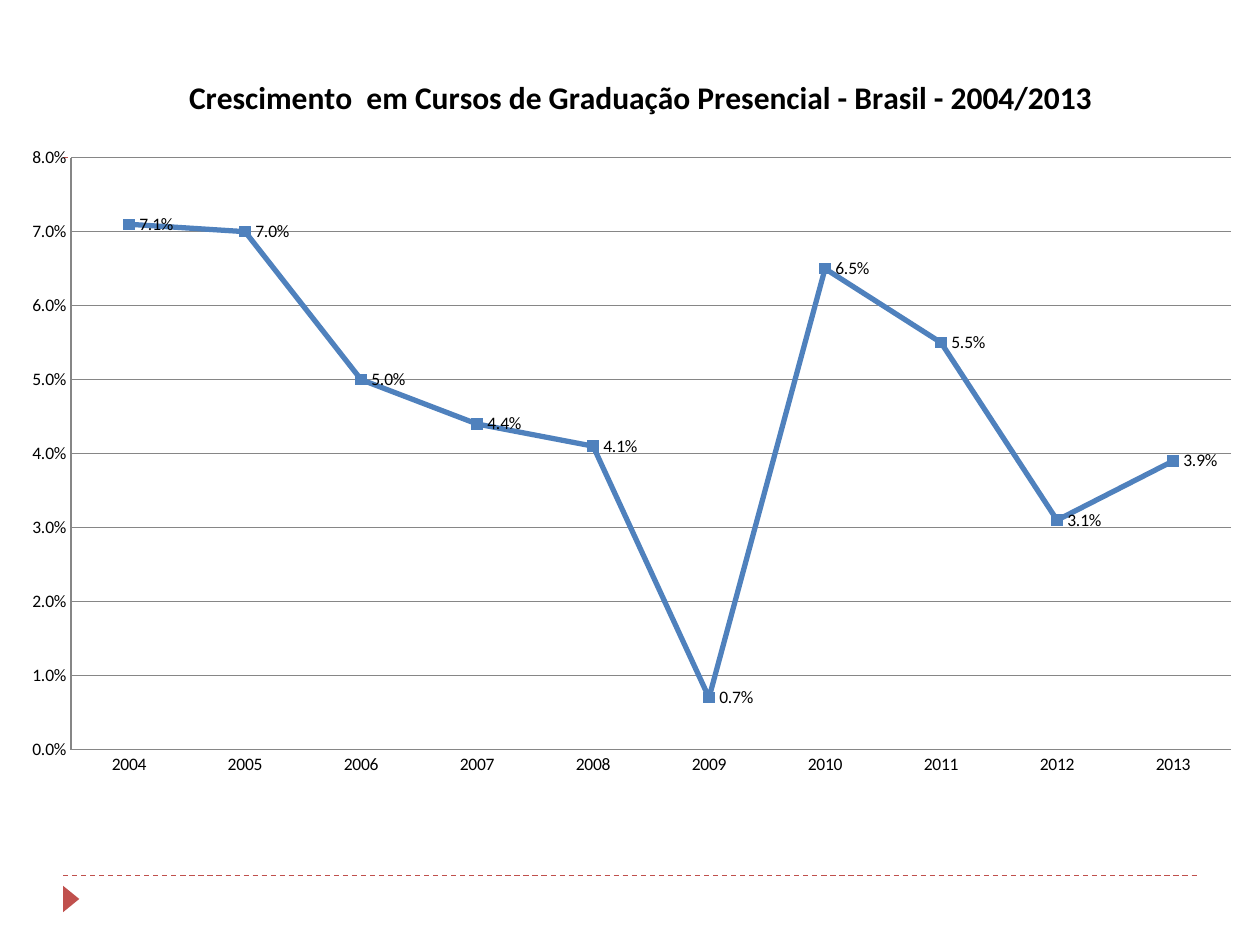
from lxml import etree
from pptx import Presentation
from pptx.chart import data as chart_data
from pptx.dml.color import RGBColor
from pptx.enum import chart as charts, dml, shapes
from pptx.oxml import ns
from pptx.util import Pt

COLORS = {"accent": "C0504D", "series": "4F81BD", "axis": "868686", "text": "000000"}
FONT = "Calibri"
GROWTH = {
    "2004": 0.071, "2005": 0.07, "2006": 0.05, "2007": 0.044, "2008": 0.041,
    "2009": 0.007, "2010": 0.065, "2011": 0.055, "2012": 0.031, "2013": 0.039,
}


def rgb(name):
    """Return the named palette colour."""
    return RGBColor.from_string(COLORS[name])


def style_font(font, size, bold=False, color="text"):
    """Set the face, size, weight and colour of a font."""
    font.name, font.size, font.bold = FONT, Pt(size), bold
    font.color.rgb = rgb(color)


def write(frame, content, **font_format):
    """Put one formatted run of text in a text frame."""
    run = frame.paragraphs[0].add_run()
    run.text = content
    style_font(run.font, **font_format)


def style_line(line, color, width):
    """Set the colour and width of a line."""
    line.color.rgb = rgb(color)
    line.width = Pt(width)


def set_layout(parent, index, **fractions):
    """Place a chart part by fractions of the chart area."""
    for former in parent.findall(ns.qn("c:layout")):
        parent.remove(former)
    layout = etree.Element(ns.qn("c:layout"))
    manual = etree.SubElement(layout, ns.qn("c:manualLayout"))
    modes = {"xMode": "edge", "yMode": "edge"}
    if "w" in fractions:
        modes = {"layoutTarget": "inner", **modes}
    for tag, value in {**modes, **fractions}.items():
        etree.SubElement(manual, ns.qn(f"c:{tag}")).set("val", str(value))
    parent.insert(index, layout)


def add_rule(slide, left, top, width):
    """Draw a dashed horizontal rule."""
    rule = slide.shapes.add_connector(
        shapes.MSO_CONNECTOR.STRAIGHT, Pt(left), Pt(top), Pt(left + width), Pt(top))
    style_line(rule.line, "accent", 0.75)
    rule.line.dash_style = dml.MSO_LINE.DASH
    etree.SubElement(rule.element.spPr, ns.qn("a:effectLst"))


def add_frame(slide, left, top, width, height):
    """Draw the rules at both ends of the box and the pointer below it."""
    for rule_top in (top, top + height):
        add_rule(slide, left, rule_top, width)
    pointer = slide.shapes.add_shape(
        shapes.MSO_SHAPE.ISOSCELES_TRIANGLE,
        Pt(left - 2.8), Pt(top + height + 8.7), Pt(15), Pt(9.2))
    pointer.rotation = 90
    pointer.shadow.inherit = False
    pointer.fill.solid()
    pointer.fill.fore_color.rgb = rgb("accent")
    pointer.line.fill.background()


def style_axes(chart):
    """Format the year axis and the percentage axis."""
    for axis in (chart.category_axis, chart.value_axis):
        axis.major_tick_mark = axis.minor_tick_mark = charts.XL_TICK_MARK.NONE
        style_line(axis.format.line, "axis", 0.75)
    growth_axis = chart.value_axis
    growth_axis.minimum_scale, growth_axis.maximum_scale = 0, 0.08
    growth_axis.major_unit = 0.01
    growth_axis.has_major_gridlines = True
    style_line(growth_axis.major_gridlines.format.line, "axis", 0.75)
    growth_axis.tick_labels.number_format = "0.0%"
    growth_axis.tick_labels.number_format_is_linked = False


def style_series(series):
    """Format the growth line, its markers and its value labels."""
    series.smooth = False
    style_line(series.format.line, "series", 3)
    marker = series.marker
    marker.style, marker.size = charts.XL_MARKER_STYLE.SQUARE, 6
    marker.format.fill.solid()
    marker.format.fill.fore_color.rgb = rgb("series")
    style_line(marker.format.line, "series", 0.75)
    labels = series.data_labels
    labels.show_value = True
    labels.number_format, labels.number_format_is_linked = "0.0%", False
    labels.position = charts.XL_LABEL_POSITION.RIGHT
    style_font(labels.font, size=10)


def add_growth_chart(slide, left, top, width, height):
    """Add the enrolment growth line chart."""
    growth = chart_data.CategoryChartData(number_format="0.0%")
    growth.categories = list(GROWTH)
    growth.add_series("Series 1", list(GROWTH.values()))
    chart = slide.shapes.add_chart(
        charts.XL_CHART_TYPE.LINE_MARKERS,
        Pt(left), Pt(top), Pt(width), Pt(height), growth).chart
    style_font(chart.font, size=10)
    chart.has_legend = False
    chart.has_title = True
    write(chart.chart_title.text_frame,
          "Crescimento  em Cursos de Graduação Presencial - Brasil - 2004/2013",
          size=18, bold=True)
    set_layout(chart.chart_title.element, 1, x=0.14, y=0.02)
    set_layout(chart.element.find(f".//{ns.qn('c:plotArea')}"), 0,
               x=0.05, y=0.14, w=0.93, h=0.81)
    chart.plots[0].vary_by_categories = False
    style_axes(chart)
    style_series(chart.plots[0].series[0])


def main():
    """Build and save the slide."""
    deck = Presentation()
    deck.slide_width, deck.slide_height = Pt(720), Pt(540)
    slide = deck.slides.add_slide(deck.slide_layouts[6])
    add_frame(slide, left=36, top=90, width=648, height=410.4)
    add_growth_chart(slide, left=5, top=31.7, width=712.8, height=417.6)
    deck.save("out.pptx")


if __name__ == "__main__":
    main()
